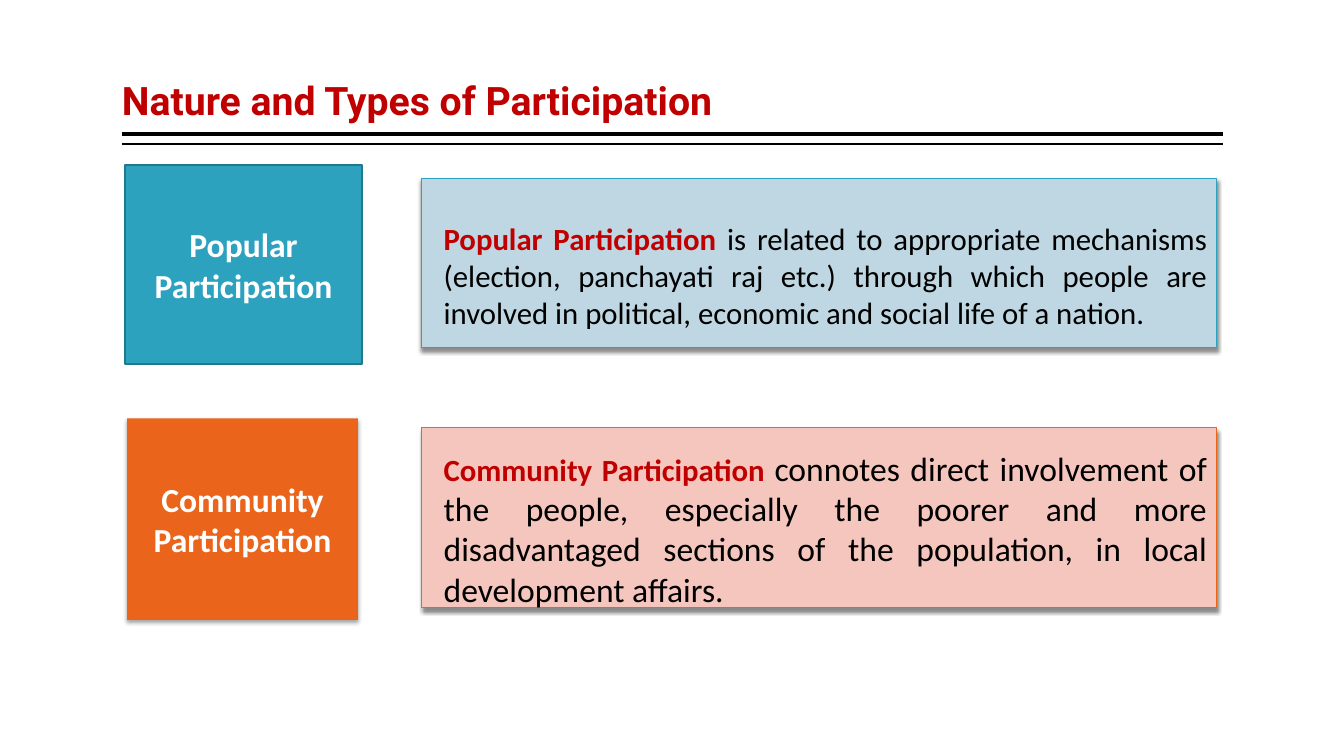
from lxml import etree
from pptx import Presentation
from pptx.dml.color import RGBColor
from pptx.enum.shapes import MSO_CONNECTOR, MSO_SHAPE
from pptx.enum.text import MSO_ANCHOR, PP_ALIGN
from pptx.oxml.ns import qn
from pptx.util import Inches, Pt

BLACK = RGBColor(0x00, 0x00, 0x00)
WHITE = RGBColor(0xFF, 0xFF, 0xFF)
RED = RGBColor(0xC0, 0x00, 0x00)
TEAL = RGBColor(0x2D, 0xA2, 0xBF)
DARK_TEAL = RGBColor(0x21, 0x78, 0x8D)
PALE_BLUE = RGBColor(0xBE, 0xD7, 0xE2)
ORANGE = RGBColor(0xEB, 0x64, 0x1B)
PALE_PINK = RGBColor(0xF5, 0xC6, 0xBD)


def add_shadow(shape, opacity, distance):
    """Cast a soft black shadow straight down."""
    effects = shape._element.spPr.find(qn("a:effectLst"))
    shadow = etree.SubElement(
        effects, qn("a:outerShdw"), blurRad=str(Pt(3)), dist=str(Pt(distance)),
        dir=str(90 * 60000), algn="ctr", rotWithShape="0")
    color = etree.SubElement(shadow, qn("a:srgbClr"), val=str(BLACK))
    etree.SubElement(color, qn("a:alpha"), val=str(opacity * 1000))


def add_box(page, box, fill, line, line_width):
    left, top, width, height = map(Inches, box)
    shape = page.shapes.add_shape(MSO_SHAPE.RECTANGLE, left, top, width, height)
    shape.shadow.inherit = False
    shape.fill.solid()
    shape.fill.fore_color.rgb = fill
    if line is None:
        shape.line.fill.background()
    else:
        shape.line.color.rgb = line
        shape.line.width = Pt(line_width)
    shape.text_frame.word_wrap = True
    return shape


def set_font(font, name, size, color, bold):
    font.name = name
    font.size = Pt(size)
    font.color.rgb = color
    font.bold = bold


def add_heading(page, box, text):
    """Place the title with a thick and a thin rule below it."""
    left, top, width, height = box
    title = page.shapes.add_textbox(*map(Inches, box))
    frame = title.text_frame
    frame.word_wrap = True
    frame.vertical_anchor = MSO_ANCHOR.BOTTOM
    frame.margin_left = frame.margin_right = 0
    para = frame.paragraphs[0]
    para.text = text
    para.line_spacing = 0.9
    set_font(para.font, "Roboto", 28, RED, True)
    for gap, weight in ((0.05, 3), (0.15, 1)):
        y = Inches(top + height + gap)
        rule = page.shapes.add_connector(
            MSO_CONNECTOR.STRAIGHT, Inches(left), y, Inches(left + width), y)
        rule.line.color.rgb = BLACK
        rule.line.width = Pt(weight)
        etree.SubElement(rule._element.spPr, qn("a:effectLst"))


def add_term(page, box, term, fill, line=None):
    """Place the coloured tile that names a type of participation."""
    tile = add_box(page, box, fill, line, 1.5)
    tile.text_frame.vertical_anchor = MSO_ANCHOR.MIDDLE
    para = tile.text_frame.paragraphs[0]
    para.text = term
    para.alignment = PP_ALIGN.CENTER
    set_font(para.font, "Calibri", 24, WHITE, True)
    return tile


def add_definition(page, box, term, meaning, size, inset, fill, line):
    """Place the panel that explains a term, its text starting inset below the top."""
    panel = add_box(page, box, fill, line, 0.79)
    add_shadow(panel, 45, 2.4)
    frame = panel.text_frame
    frame.vertical_anchor = MSO_ANCHOR.TOP
    frame.margin_top = Inches(inset)
    frame.margin_left = Inches(0.22)
    para = frame.paragraphs[0]
    para.alignment = PP_ALIGN.JUSTIFY
    for text, points, color, bold in ((term + " ", 22, RED, True),
                                      (meaning, size, BLACK, False)):
        span = para.add_run()
        span.text = text
        set_font(span.font, "Calibri", points, color, bold)


def main():
    deck = Presentation()
    deck.slide_width, deck.slide_height = Inches(13.33), Inches(7.5)
    page = deck.slides.add_slide(deck.slide_layouts[6])

    add_heading(page, (1.21, 0.08, 10.92, 1.2), "Nature and Types of Participation")

    popular, community = "Popular Participation", "Community Participation"
    add_term(page, (1.24, 1.64, 2.35, 1.97), popular, TEAL, DARK_TEAL)
    add_shadow(add_term(page, (1.26, 4.15, 2.29, 2), community, ORANGE), 35, 2)

    add_definition(
        page, (4.18, 1.77, 7.89, 1.68), popular,
        "is related to appropriate mechanisms (election, panchayati raj etc.) through "
        "which people are involved in political, economic and social life of a nation.",
        22, 0.41, PALE_BLUE, TEAL)
    add_definition(
        page, (4.18, 4.24, 7.89, 1.79), community,
        "connotes direct involvement of the people, especially the poorer and more "
        "disadvantaged sections of the population, in local development affairs.",
        24, 0.2, PALE_PINK, ORANGE)

    deck.save("out.pptx")


if __name__ == "__main__":
    main()
